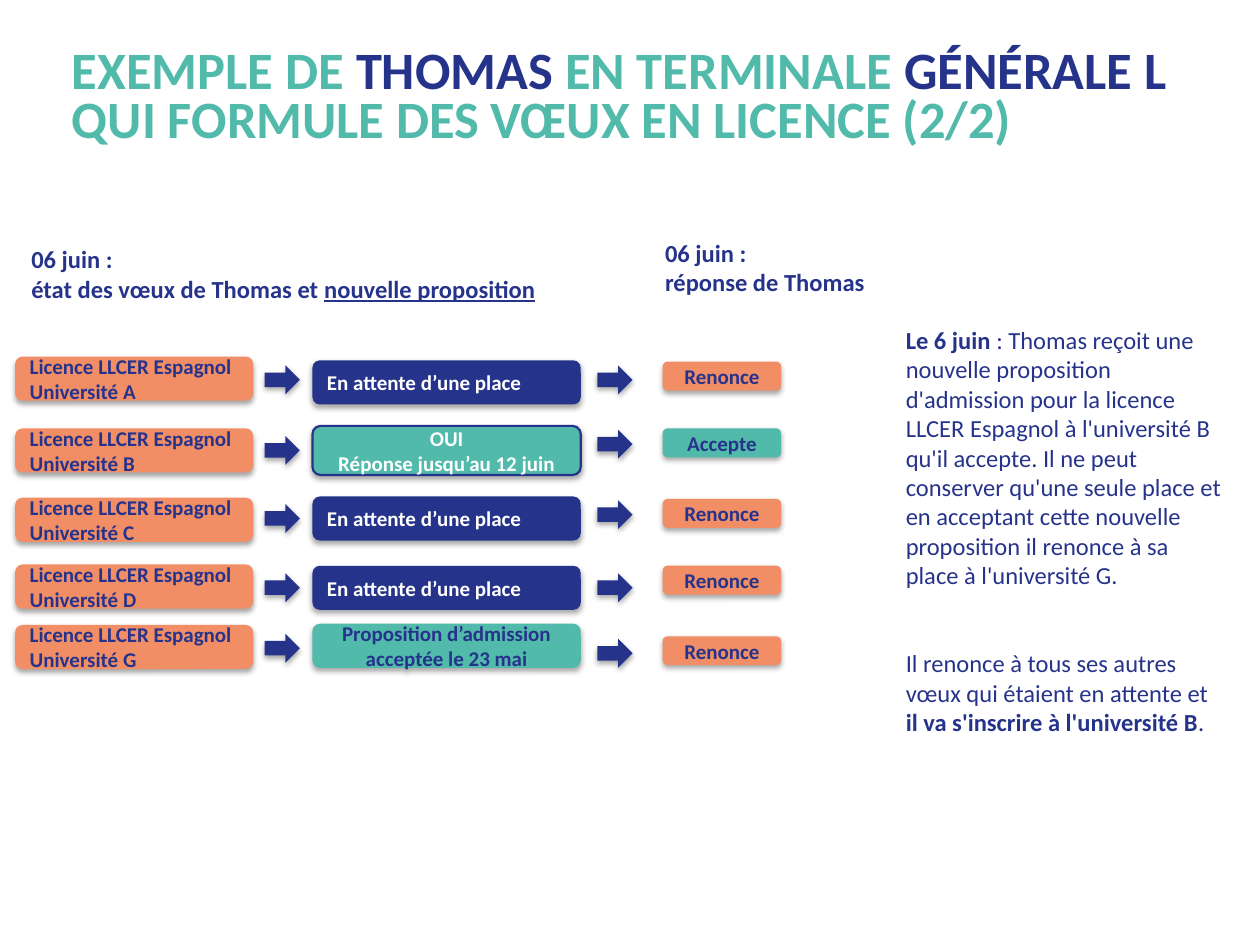
from pptx import Presentation, util as u
from pptx.dml.color import RGBColor
from pptx.enum import shapes, text
from pptx.oxml import parse_xml
from pptx.oxml.ns import nsdecls

NAVY, TEAL, ORANGE, WHITE = "26338B", "51BAAA", "F28E65", "FFFFFF"
COLS, ROWS = 100, 75
LEFT, CENTER = text.PP_ALIGN.LEFT, text.PP_ALIGN.CENTER
SHADOW = (
    f'<a:outerShdw {nsdecls("a")} blurRad="40000" dist="23000" dir="5400000" '
    'rotWithShape="0"><a:srgbClr val="000000"><a:alpha val="35000"/>'
    '</a:srgbClr></a:outerShdw>'
)


def rgb(value):
    return RGBColor.from_string(value)


def add_run(p, content, size=12, color=NAVY, bold=True, underline=False):
    r = p.add_run()
    r.text = content
    font = r.font
    font.name, font.size, font.bold = "Calibri", u.Pt(size), bold
    font.color.rgb = rgb(color)
    if underline:
        font.underline = True


def write(tf, paragraphs, align=LEFT, gap=0, **style):
    """Fill a frame; each paragraph is a list of (text, format) runs."""
    tf.word_wrap = True
    for i, runs in enumerate(paragraphs):
        p = tf.paragraphs[0] if i == 0 else tf.add_paragraph()
        p.alignment = align
        if i and gap:
            p.space_before = u.Pt(gap)
        for content, changes in runs:
            add_run(p, content, **{**style, **changes})


def plain(*lines):
    return [[(line, {})] for line in lines]


class Deck:
    """Holds the current slide and its grid of 100 columns by 75 rows."""

    def __init__(self):
        self.prs = Presentation()
        self.prs.slide_width, self.prs.slide_height = u.Inches(10), u.Inches(7.5)
        self.s = self.prs.slides.add_slide(self.prs.slide_layouts[5])

    def at(self, x, y, w, h):
        col, row = self.prs.slide_width / COLS, self.prs.slide_height / ROWS
        return [round(n) for n in (x * col, y * row, w * col, h * row)]

    def title(self, box, runs):
        sp = self.s.shapes.title
        sp.left, sp.top, sp.width, sp.height = self.at(*box)
        tf = sp.text_frame
        tf.auto_size = text.MSO_AUTO_SIZE.NONE
        tf.vertical_anchor = text.MSO_ANCHOR.MIDDLE
        write(tf, [runs], size=30)
        tf.paragraphs[0].line_spacing = u.Pt(28)

    def text_box(self, box, paragraphs, **style):
        tf = self.s.shapes.add_textbox(*self.at(*box)).text_frame
        write(tf, paragraphs, size=14, **style)
        tf.auto_size = text.MSO_AUTO_SIZE.SHAPE_TO_FIT_TEXT

    def shape(self, kind, box, fill, line=None):
        sp = self.s.shapes.add_shape(kind, *self.at(*box))
        sp.fill.solid()
        sp.fill.fore_color.rgb = rgb(fill)
        if line:
            sp.line.color.rgb, sp.line.width = rgb(line), u.Pt(1.25)
        else:
            sp.line.fill.background()
        sp.shadow.inherit = False
        sp._element.spPr.find("{*}effectLst").append(parse_xml(SHADOW))
        return sp

    def arrow(self, x, y):
        self.shape(shapes.MSO_SHAPE.RIGHT_ARROW, (x, y, 2.8, 2.3), NAVY)

    def card(self, box, lines, fill, line=None, **style):
        sp = self.shape(shapes.MSO_SHAPE.ROUNDED_RECTANGLE, box, fill, line)
        sp.text_frame.vertical_anchor = text.MSO_ANCHOR.MIDDLE
        write(sp.text_frame, plain(*lines), **style)


WAITING = dict(lines=["En attente d’une place"], fill=NAVY, color=WHITE)
OFFER = dict(lines=["OUI", "Réponse jusqu’au 12 juin"], fill=TEAL, line=NAVY,
             color=WHITE, align=CENTER)
ACCEPTED = dict(lines=["Proposition d’admission", "acceptée le 23 mai"],
                fill=TEAL, align=CENTER)
ANSWER_FILLS = {"Renonce": ORANGE, "Accepte": TEAL}

# University, status, answer, then the tops of wish, arrow, status, arrow, answer
WISHES = [
    ("A", WAITING, "Renonce", (28.3, 29, 28.6, 29, 28.7)),
    ("B", OFFER, "Accepte", (34, 34.6, 33.8, 34.1, 34)),
    ("C", WAITING, "Renonce", (39.5, 40, 39.4, 39.7, 39.6)),
    ("D", WAITING, "Renonce", (44.8, 45.5, 44.9, 45.5, 44.9)),
    ("G", ACCEPTED, "Renonce", (49.6, 50.3, 49.5, 50.7, 50.5)),
]


def main():
    deck = Deck()
    teal = {"color": TEAL}
    deck.title((4.7, 0.9, 90.9, 14.1), [
        ("EXEMPLE DE ", teal), ("THOMAS", {}), (" EN TERMINALE ", teal),
        ("GÉNÉRALE L", {}), (" QUI FORMULE DES VŒUX EN LICENCE (2/2)", teal),
    ])
    deck.text_box((1.5, 18.9, 43.7, 5.7), [
        [("06 juin :", {})],
        [("état des vœux de Thomas et ", {}),
         ("nouvelle proposition", {"underline": True})],
    ])
    deck.text_box((51.8, 18.4, 29.3, 5.7), plain("06 juin :", "réponse de Thomas"))

    for university, status, answer, tops in WISHES:
        wish_y, arrow_y, status_y, reply_y, answer_y = tops
        deck.card((1.2, wish_y, 18.9, 3.5),
                  ["Licence LLCER Espagnol", f"Université {university}"], ORANGE)
        deck.arrow(21, arrow_y)
        height = 3.9 if status is OFFER else 3.5
        deck.card((24.8, status_y, 21.3, height), **status)
        deck.arrow(47.4, reply_y)
        deck.card((52.6, answer_y, 9.4, 2.3), [answer], ANSWER_FILLS[answer],
                  align=CENTER)

    bold = {"bold": True}
    deck.text_box((70.9, 25.3, 27.2, 34), [
        [("Le 6 juin ", bold),
         (": Thomas reçoit une nouvelle proposition d'admission pour la licence "
          "LLCER Espagnol à l'université B qu'il accepte. Il ne peut conserver "
          "qu'une seule place et en acceptant cette nouvelle proposition il "
          "renonce à sa place à l'université G.", {})],
        [("Il renonce à tous ses autres vœux qui étaient en attente et ", {}),
         ("il va s'inscrire à l'université B", bold), (".", {})],
    ], gap=33.6, bold=False)
    deck.prs.save("out.pptx")


if __name__ == "__main__":
    main()
